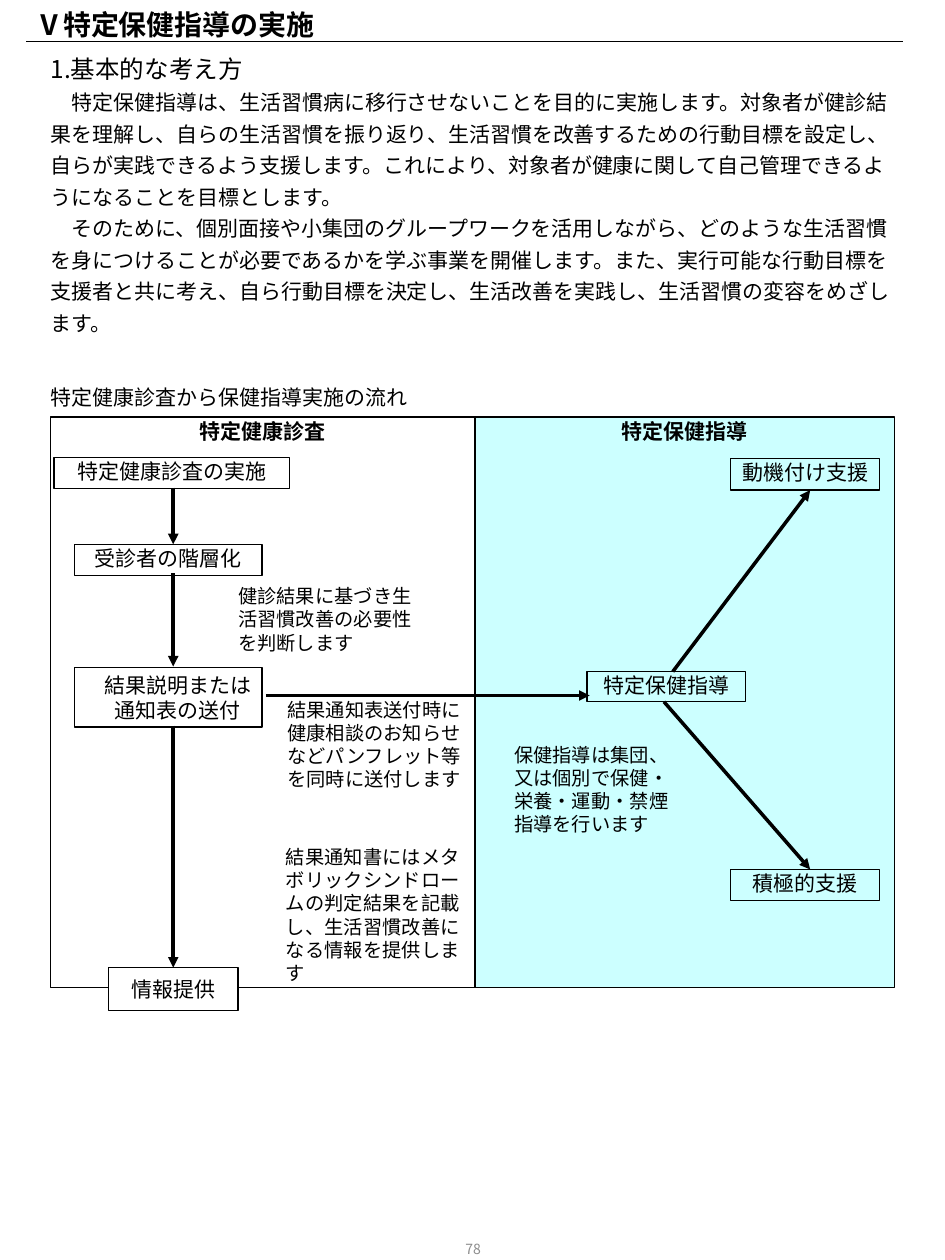
from lxml.etree import SubElement as Sub
from pptx import Presentation
from pptx.dml.color import RGBColor as Rgb
from pptx.enum.shapes import MSO_CONNECTOR as Con, MSO_SHAPE as Kind
from pptx.enum.text import MSO_ANCHOR as Anchor, PP_ALIGN as Align
from pptx.oxml.ns import qn
from pptx.util import Inches, Pt

FONT = "Noto Sans CJK JP"
HUES = {"ink": "000000", "white": "FFFFFF", "aqua": "CCFFFF", "gray": "8C8C8C"}
COLS, ROWS = 75, 100
PAD = (0.08, 0.01)
FLUSH = (0, 0.05)
MID = 13.75


class Page:
    def __init__(self, deck):
        self.slide = deck.slides.add_slide(deck.slide_layouts[6])
        self.col = deck.slide_width / COLS
        self.row = deck.slide_height / ROWS

    def spot(self, x, y):
        return round(x * self.col), round(y * self.row)

    def hue(self, name):
        return Rgb.from_string(HUES[name])

    def label(self, shape, lines, size, bold=False, ink="ink", align=Align.LEFT,
              anchor=Anchor.TOP, pad=PAD, space=None, indent=0):
        frame = shape.text_frame
        frame.word_wrap = True
        frame.vertical_anchor = anchor
        frame.margin_left = frame.margin_right = Inches(pad[0])
        frame.margin_top = frame.margin_bottom = Inches(pad[1])
        frame.text = "\n".join(lines)
        for para in frame.paragraphs:
            para.alignment = align
            para.line_spacing = space
            font = para.font
            font.size, font.bold, font.name = Pt(size), bold, FONT
            font.color.rgb = self.hue(ink)
            props = para._p.get_or_add_pPr()
            Sub(props.find(qn("a:defRPr")), qn("a:ea"), typeface=FONT)
            if indent:
                props.set("marL", "0")
                props.set("indent", str(Inches(indent)))
        return frame

    def text(self, area, lines, size, **style):
        box = self.slide.shapes.add_textbox(*self.spot(*area[:2]), *self.spot(*area[2:]))
        return self.label(box, lines, size, **style)

    def box(self, area, lines, fill="white", size=12, edge=True, align=Align.CENTER, **style):
        shape = self.slide.shapes.add_shape(
            Kind.RECTANGLE, *self.spot(*area[:2]), *self.spot(*area[2:]))
        shape.shadow.inherit = False
        shape.fill.solid()
        shape.fill.fore_color.rgb = self.hue(fill)
        if edge:
            shape.line.color.rgb = self.hue("ink")
            shape.line.width = Pt(0.75)
        else:
            shape.line.fill.background()
        self.label(shape, lines, size, align=align, **style)
        return shape

    def line(self, start, end, width=2, head=True, goal=None):
        link = self.slide.shapes.add_connector(
            Con.STRAIGHT, *self.spot(*start), *self.spot(*end))
        link.line.color.rgb = self.hue("ink")
        link.line.width = Pt(width)
        if goal is not None:
            link.end_connect(goal, 0)
        props = link._element.spPr
        if head:
            Sub(props.find(qn("a:ln")), qn("a:tailEnd"), type="triangle")
        Sub(props, qn("a:effectLst"))


def main():
    deck = Presentation()
    deck.slide_width, deck.slide_height = Inches(7.5), Inches(10)
    page = Page(deck)

    page.text((2.8, 0.1, 66.9, 3.7), ["Ⅴ特定保健指導の実施"], 16, bold=True,
              anchor=Anchor.MIDDLE, pad=FLUSH)
    page.line((2.1, 3.3), (71.7, 3.3), width=0.75, head=False)
    body = page.text((4, 3.2, 66.9, 16.5), [
        "1.基本的な考え方",
        "　特定保健指導は、生活習慣病に移行させないことを目的に実施します。"
        "対象者が健診結果を理解し、自らの生活習慣を振り返り、生活習慣を改善するための"
        "行動目標を設定し、自らが実践できるよう支援します。"
        "これにより、対象者が健康に関して自己管理できるようになることを目標とします。",
        "　そのために、個別面接や小集団のグループワークを活用しながら、"
        "どのような生活習慣を身につけることが必要であるかを学ぶ事業を開催します。"
        "また、実行可能な行動目標を支援者と共に考え、自ら行動目標を決定し、"
        "生活改善を実践し、生活習慣の変容をめざします。",
    ], 12, pad=FLUSH, space=1.25)
    body.paragraphs[0].font.size = Pt(14)
    page.text((28.8, 96.5, 17.5, 5.3), ["78"], 8, ink="gray", align=Align.CENTER,
              anchor=Anchor.MIDDLE, pad=(0.1, 0.05))
    page.text((4, 29.5, 66.9, 3.2), ["特定健康診査から保健指導実施の流れ"], 12,
              pad=FLUSH, space=1.25)

    page.box((37.7, 33.1, 33.3, 45.3), ["特定保健指導"], "aqua", bold=True)
    page.box((4, 33.1, 33.7, 45.3), ["特定健康診査"], bold=True)
    page.box((4.3, 36.3, 18.7, 2.5), ["特定健康診査の実施"])
    page.box((5.9, 43.2, 14.9, 2.5), ["受診者の階層化"])
    page.box((5.9, 53, 14.9, 4.7), ["結果説明または", "通知表の送付"],
             anchor=Anchor.MIDDLE, indent=0.15)
    info = page.box((8.6, 76.8, 10.3, 3.4), ["情報提供"], anchor=Anchor.MIDDLE)
    for area, name in (
        ((58, 36.4, 11.8, 2.5), "動機付け支援"),
        ((58, 69, 11.8, 2.5), "積極的支援"),
        ((46.6, 53.3, 12.6, 2.4), "特定保健指導"),
    ):
        page.box(area, [name], "aqua")

    for area, note in (
        ((22, 55.3, 16, 21.6), "結果通知表送付時に健康相談のお知らせなどパンフレット等を同時に送付します"),
        ((18.1, 46.3, 15.4, 4.7), "健診結果に基づき生活習慣改善の必要性を判断します"),
        ((21.9, 67, 16, 9.9),
         "結果通知書にはメタボリックシンドロームの判定結果を記載し、生活習慣改善になる情報を提供します"),
    ):
        page.text(area, [note], 11)
    page.box((40, 58.9, 14.5, 8.1),
             ["保健指導は集団、又は個別で保健・栄養・運動・禁煙指導を行います"],
             "aqua", size=11, edge=False, align=Align.LEFT)

    for start, end, goal in (
        ((MID, 38.7), (MID, 43.2), None),
        ((MID, 45.5), (MID, 52.9), None),
        ((MID, 57.6), (MID, 76.8), info),
        ((52.7, 55.7), (64.3, 69), None),
        ((53.4, 53.3), (64.3, 38.9), None),
        ((21.1, 55.2), (46.8, 55.2), None),
    ):
        page.line(start, end, goal=goal)
    deck.save("out.pptx")


if __name__ == "__main__":
    main()
